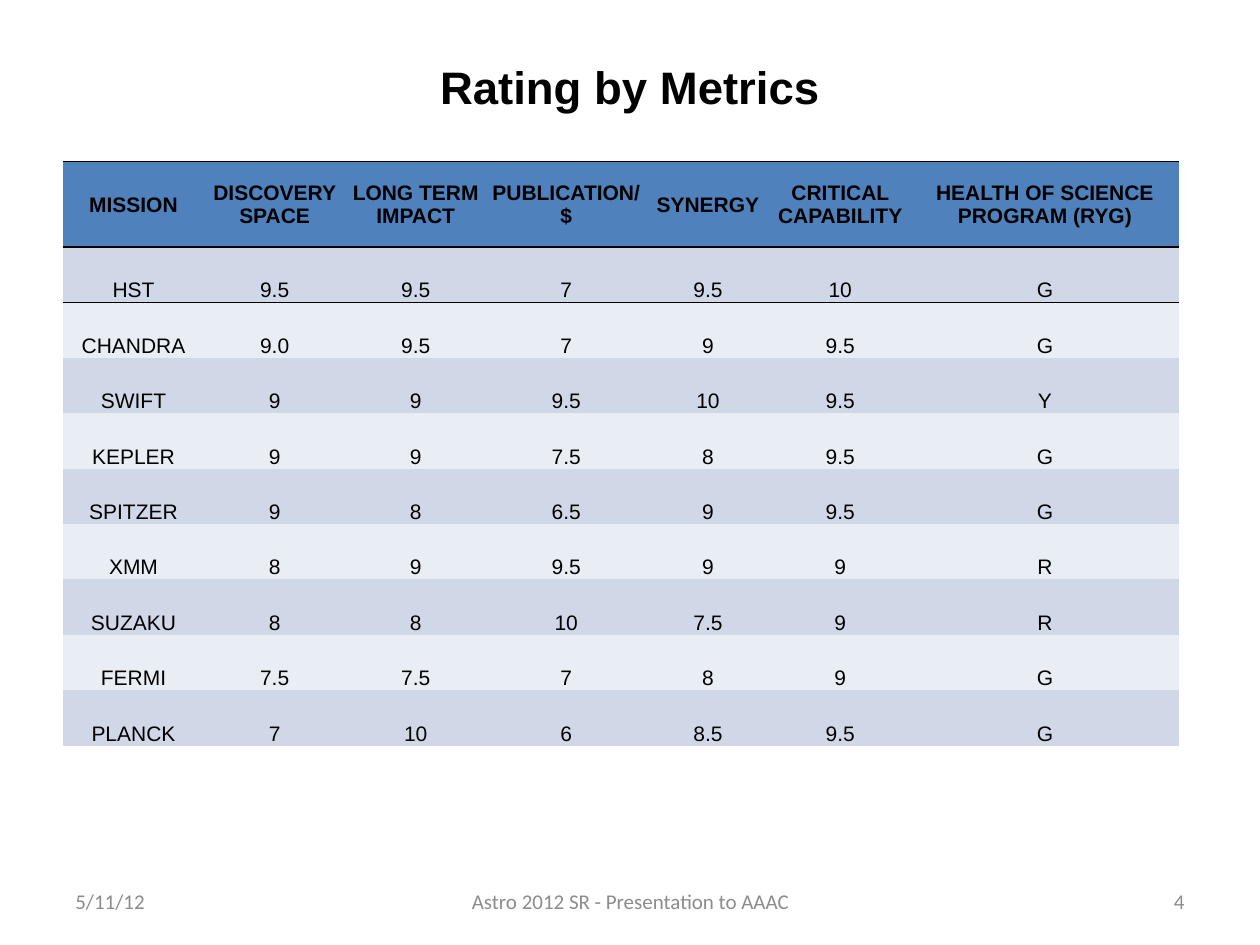
import lxml.etree
import pptx
import pptx.dml.color
import pptx.enum.text
import pptx.oxml.ns
import pptx.util

ALIGN = pptx.enum.text.PP_ALIGN
ANCHOR = pptx.enum.text.MSO_ANCHOR

TITLE = "Rating by Metrics"
HEADERS = ["MISSION", "DISCOVERY SPACE", "LONG TERM IMPACT", "PUBLICATION/$",
           "SYNERGY", "CRITICAL CAPABILITY", "HEALTH OF SCIENCE PROGRAM (RYG)"]
RATINGS = [
    ("HST", "9.5", "9.5", "7", "9.5", "10", "G"),
    ("CHANDRA", "9.0", "9.5", "7", "9", "9.5", "G"),
    ("SWIFT", "9", "9", "9.5", "10", "9.5", "Y"),
    ("KEPLER", "9", "9", "7.5", "8", "9.5", "G"),
    ("SPITZER", "9", "8", "6.5", "9", "9.5", "G"),
    ("XMM", "8", "9", "9.5", "9", "9", "R"),
    ("SUZAKU", "8", "8", "10", "7.5", "9", "R"),
    ("FERMI", "7.5", "7.5", "7", "8", "9", "G"),
    ("PLANCK", "7", "10", "6", "8.5", "9.5", "G"),
]
FOOTERS = [  # text, left, width, alignment
    ("5/11/12", 0.5, 2.33, ALIGN.LEFT),
    ("Astro 2012 SR - Presentation to AAAC", 3.42, 3.17, ALIGN.CENTER),
    ("4", 7.17, 2.33, ALIGN.RIGHT),
]

SLIDE_WIDTH, SLIDE_HEIGHT, MARGIN = 10, 7.5, 0.5
TABLE_TOP = 1.28
COLUMN_WIDTHS = [1.12, 1.12, 1.12, 1.27, 0.98, 1.12, 2.13]
HEADER_HEIGHT, ROW_HEIGHT = 0.68, 0.44
BLACK, GREY, HEADER_FILL = "000000", "8C8C8C", "4F81BD"
BAND_FILLS = ["D0D8E8", "E9EDF4"]
NO_GRID_STYLE = "{2D5ABB26-0587-4C30-8999-92F81FD0307C}"


def inches(value):
    return pptx.util.Inches(value)


def color(value):
    return pptx.dml.color.RGBColor.from_string(value)


def write(frame, text, size, font, text_color, alignment, bold=False):
    frame.word_wrap = True
    paragraph = frame.paragraphs[0]
    paragraph.alignment = alignment
    run = paragraph.add_run()
    run.text = text
    run.font.size = pptx.util.Pt(size)
    run.font.name = font
    run.font.bold = bold
    run.font.color.rgb = color(text_color)


def add_text(slide, left, top, width, height, *style, **options):
    box = slide.shapes.add_textbox(*map(inches, (left, top, width, height)))
    box.text_frame.vertical_anchor = ANCHOR.MIDDLE
    write(box.text_frame, *style, **options)


def add_borders(cell, *edges):
    """Draw 1 pt black lines; edges are names such as lnT, in schema order."""
    properties = cell._tc.get_or_add_tcPr()
    for position, edge in enumerate(edges):
        line = lxml.etree.Element(pptx.oxml.ns.qn(f"a:{edge}"), w=str(pptx.util.Pt(1)))
        fill = lxml.etree.SubElement(line, pptx.oxml.ns.qn("a:solidFill"))
        lxml.etree.SubElement(fill, pptx.oxml.ns.qn("a:srgbClr"), val=BLACK)
        properties.insert(position, line)


def add_ratings_table(slide):
    rows = [HEADERS, *RATINGS]
    heights = [HEADER_HEIGHT] + [ROW_HEIGHT] * len(RATINGS)
    frame = slide.shapes.add_table(
        len(rows), len(HEADERS), inches(MARGIN), inches(TABLE_TOP),
        inches(sum(COLUMN_WIDTHS)), inches(sum(heights)))
    table = frame.table
    table._tbl.tblPr.find(pptx.oxml.ns.qn("a:tableStyleId")).text = NO_GRID_STYLE
    for column, width in zip(table.columns, COLUMN_WIDTHS):
        column.width = inches(width)
    for row_index, (row, height) in enumerate(zip(rows, heights)):
        table.rows[row_index].height = inches(height)
        is_header = row_index == 0
        fill = HEADER_FILL if is_header else BAND_FILLS[(row_index - 1) % 2]
        for column_index, text in enumerate(row):
            cell = table.cell(row_index, column_index)
            cell.margin_left = cell.margin_right = cell.margin_top = inches(0.01)
            cell.margin_bottom = 0
            cell.vertical_anchor = ANCHOR.MIDDLE if is_header else ANCHOR.BOTTOM
            cell.fill.solid()
            cell.fill.fore_color.rgb = color(fill)
            if is_header:
                add_borders(cell, "lnT", "lnB")
            elif row_index == 1:
                add_borders(cell, "lnT")
            write(cell.text_frame, text, 12, "Arial", BLACK, ALIGN.CENTER, bold=is_header)


def main():
    presentation = pptx.Presentation()
    presentation.slide_width = inches(SLIDE_WIDTH)
    presentation.slide_height = inches(SLIDE_HEIGHT)
    slide = presentation.slides.add_slide(presentation.slide_layouts[6])
    add_text(slide, MARGIN, 0.3, SLIDE_WIDTH - 2 * MARGIN, 0.77,
             TITLE, 26, "Arial", BLACK, ALIGN.CENTER, bold=True)
    add_ratings_table(slide)
    for text, left, width, alignment in FOOTERS:
        add_text(slide, left, 6.95, width, 0.4, text, 12, "Calibri", GREY, alignment)
    presentation.save("out.pptx")


if __name__ == "__main__":
    main()
